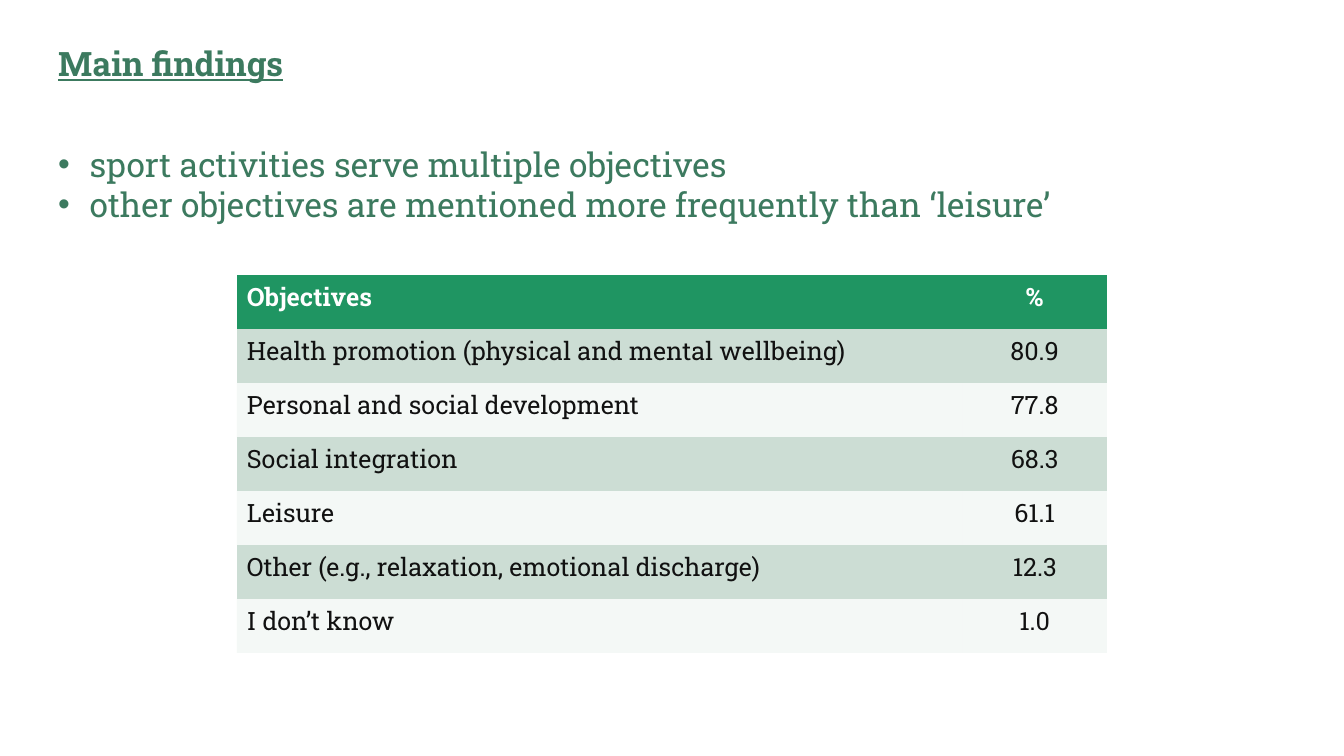
from lxml.etree import SubElement
from pptx import Presentation
from pptx.dml.color import RGBColor
from pptx.enum.text import PP_ALIGN
from pptx.oxml.ns import qn
from pptx.util import Pt

FONT = "Roboto Slab"
GREEN, HEADER_GREEN, BAND, INK, WHITE = "3C7A5F", "1F9562", "CCDDD4", "111111", "FFFFFF"
PLAIN_TABLE_STYLE = "{2D5ABB26-0587-4C30-8999-92F81FD0307C}"
BULLET_INDENT = 22.5

FINDINGS = [
    "sport activities serve multiple objectives",
    "other objectives are mentioned more frequently than ‘leisure’",
]
OBJECTIVES = [
    ("Objectives", "%"),
    ("Health promotion (physical and mental wellbeing)", "80.9"),
    ("Personal and social development", "77.8"),
    ("Social integration", "68.3"),
    ("Leisure", "61.1"),
    ("Other (e.g., relaxation, emotional discharge)", "12.3"),
    ("I don’t know", "1.0"),
]


def color(value):
    return RGBColor.from_string(value)


def write_text(paragraph, text, size=18, fill=INK, bold=False, underline=False,
               align=PP_ALIGN.LEFT, before=0, bullet=False):
    paragraph.alignment = align
    paragraph.space_before = Pt(before)
    if bullet:
        properties = paragraph._p.get_or_add_pPr()
        properties.set("marL", str(Pt(BULLET_INDENT)))
        properties.set("indent", str(Pt(-BULLET_INDENT)))
        SubElement(properties, qn("a:buFont"), typeface="Arial")
        SubElement(properties, qn("a:buChar"), char="•")
    run = paragraph.add_run()
    run.text = text
    run.font.name = FONT
    run.font.size = Pt(size)
    run.font.bold = bold
    run.font.underline = underline
    run.font.color.rgb = color(fill)


def fill_cell(cell, fill, opacity=100):
    cell.fill.solid()
    cell.fill.fore_color.rgb = color(fill)
    if opacity < 100:
        tint = cell._tc.tcPr.find(".//" + qn("a:srgbClr"))
        SubElement(tint, qn("a:alpha"), val=str(opacity * 1000))


def add_findings(slide, left, top, width, height):
    frame = slide.shapes.add_textbox(Pt(left), Pt(top), Pt(width), Pt(height)).text_frame
    frame.word_wrap = True
    write_text(frame.paragraphs[0], "Main findings", size=24, fill=GREEN,
               bold=True, underline=True)
    for index, finding in enumerate(FINDINGS):
        write_text(frame.add_paragraph(), finding, size=24, fill=GREEN,
                   before=0 if index else 43, bullet=True)


def add_objectives_table(slide, left, top, column_widths, row_height):
    table = slide.shapes.add_table(
        len(OBJECTIVES), len(column_widths), Pt(left), Pt(top),
        Pt(sum(column_widths)), Pt(row_height * len(OBJECTIVES))).table
    table._tbl.tblPr.find(qn("a:tableStyleId")).text = PLAIN_TABLE_STYLE
    for column, width in zip(table.columns, column_widths):
        column.width = Pt(width)
    for row_index, values in enumerate(OBJECTIVES):
        table.rows[row_index].height = Pt(row_height)
        header = row_index == 0
        for column_index, value in enumerate(values):
            cell = table.cell(row_index, column_index)
            # Odd rows carry the full band, even rows a light tint of it
            fill_cell(cell, HEADER_GREEN if header else BAND,
                      opacity=100 if header or row_index % 2 else 20)
            write_text(cell.text_frame.paragraphs[0], value,
                       fill=WHITE if header else INK, bold=header,
                       align=PP_ALIGN.CENTER if column_index else PP_ALIGN.LEFT)


def main():
    presentation = Presentation()
    presentation.slide_width, presentation.slide_height = Pt(960), Pt(540)
    slide = presentation.slides.add_slide(presentation.slide_layouts[6])

    # Heading and bullets
    add_findings(slide, 34.5, 27.4, 877.7, 138.2)
    # Share of each objective
    add_objectives_table(slide, 169.2, 196.5, (518.4, 103), 38.57)

    presentation.save("out.pptx")


if __name__ == "__main__":
    main()
